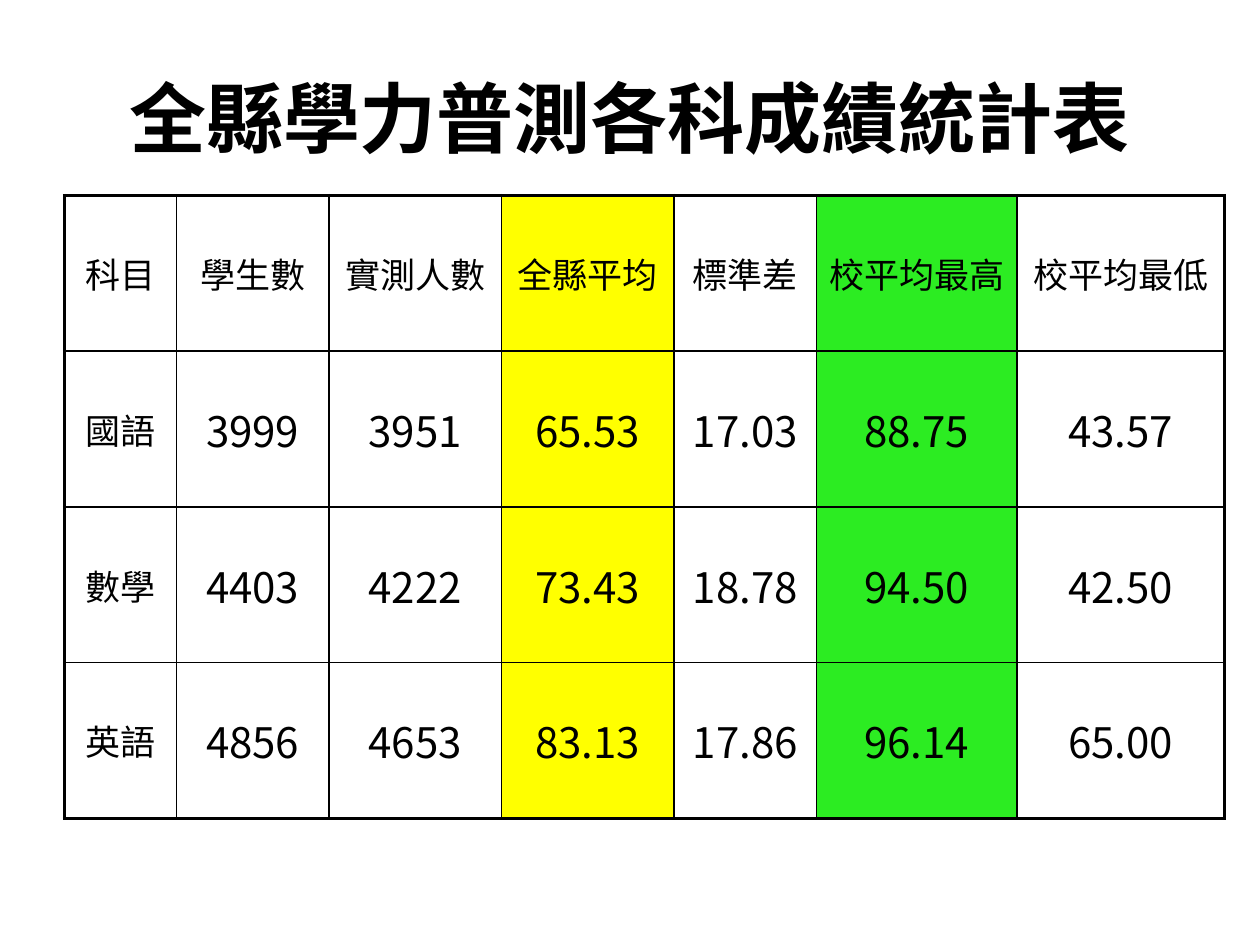
from dataclasses import dataclass

from lxml import etree
from pptx import Presentation
from pptx.dml.color import RGBColor
from pptx.enum.text import MSO_ANCHOR, PP_ALIGN
from pptx.oxml.ns import qn
from pptx.util import Cm, Pt

MIDDLE = MSO_ANCHOR.MIDDLE
CENTER = PP_ALIGN.CENTER
TITLE_ONLY_LAYOUT = 5


@dataclass(frozen=True)
class Theme:
    ink: str = "000000"
    title_font: str = "Calibri"
    body_font: str = "Noto Sans CJK SC"
    title_size: int = 44
    label_size: int = 20
    number_size: int = 24
    outer_line: float = 2.25
    inner_line: float = 1


@dataclass(frozen=True)
class Column:
    width: float
    heading: str
    values: tuple[str, ...]
    fill: str | None = None

    @property
    def texts(self) -> tuple[str, ...]:
        return (self.heading, *self.values)


THEME = Theme()
TITLE = "全縣學力普測各科成績統計表"
ROW_HEIGHT = 3.14
COLUMNS = (
    Column(2.26, "科目", ("國語", "數學", "英語")),
    Column(3.07, "學生數", ("3999", "4403", "4856")),
    Column(3.48, "實測人數", ("3951", "4222", "4653")),
    Column(3.48, "全縣平均", ("65.53", "73.43", "83.13"), "FFFF00"),
    Column(2.87, "標準差", ("17.03", "18.78", "17.86")),
    Column(4.04, "校平均最高", ("88.75", "94.50", "96.14"), "2CEC22"),
    Column(4.19, "校平均最低", ("43.57", "42.50", "65.00")),
)


def write_text(frame, text: str, *, size: int, font: str,
               bold: bool = False, space_before: int = 0) -> None:
    para = frame.paragraphs[0]
    para.alignment = CENTER
    if space_before:
        spacing = etree.SubElement(para._p.get_or_add_pPr(), qn("a:spcBef"))
        percent = etree.SubElement(spacing, qn("a:spcPct"))
        percent.set("val", str(space_before * 1000))
    span = para.add_run()
    span.text = text
    span.font.size = Pt(size)
    span.font.bold = bold
    span.font.color.rgb = RGBColor.from_string(THEME.ink)
    span.font.name = font
    east_asian = etree.SubElement(span._r.get_or_add_rPr(), qn("a:ea"))
    east_asian.set("typeface", THEME.body_font)


def draw_borders(cell, outer_sides: dict[str, bool]) -> None:
    properties = cell._tc.get_or_add_tcPr()
    for side, is_outer in outer_sides.items():
        width = THEME.outer_line if is_outer else THEME.inner_line
        line = etree.SubElement(properties, qn(f"a:ln{side}"), w=str(Pt(width)))
        fill = etree.SubElement(line, qn("a:solidFill"))
        etree.SubElement(fill, qn("a:srgbClr"), val=THEME.ink)


def fill_cell(cell, color: str | None) -> None:
    if color is None:
        cell.fill.background()
    else:
        cell.fill.solid()
        cell.fill.fore_color.rgb = RGBColor.from_string(color)


def add_title(page) -> None:
    box = page.shapes.title
    box.left, box.top, box.width, box.height = Cm(1.27), Cm(0.76), Cm(22.86), Cm(3.18)
    box.text_frame.vertical_anchor = MIDDLE
    box.text_frame.word_wrap = True
    write_text(box.text_frame, TITLE, size=THEME.title_size,
               font=THEME.title_font, bold=True)


def add_score_table(page) -> None:
    row_count = len(COLUMNS[0].texts)
    width = sum(column.width for column in COLUMNS)
    table = page.shapes.add_table(row_count, len(COLUMNS), Cm(1.3), Cm(3.94),
                                  Cm(width), Cm(ROW_HEIGHT * row_count)).table
    table.first_row = False
    table.horz_banding = False
    for row in table.rows:
        row.height = Cm(ROW_HEIGHT)
    last_row, last_column = row_count - 1, len(COLUMNS) - 1
    for column_index, column in enumerate(COLUMNS):
        table.columns[column_index].width = Cm(column.width)
        for row_index, text in enumerate(column.texts):
            cell = table.cell(row_index, column_index)
            cell.vertical_anchor = MIDDLE
            cell.margin_left = cell.margin_right = Cm(0.2)
            is_label = row_index == 0 or column_index == 0
            write_text(cell.text_frame, text, font=THEME.body_font, space_before=20,
                       size=THEME.label_size if is_label else THEME.number_size)
            draw_borders(cell, {"L": column_index == 0, "R": column_index == last_column,
                                "T": row_index == 0, "B": row_index == last_row})
            fill_cell(cell, column.fill)


def main() -> None:
    deck = Presentation()
    deck.slide_width, deck.slide_height = Cm(25.4), Cm(19.05)
    page = deck.slides.add_slide(deck.slide_layouts[TITLE_ONLY_LAYOUT])
    add_title(page)
    add_score_table(page)
    deck.save("out.pptx")


if __name__ == "__main__":
    main()
